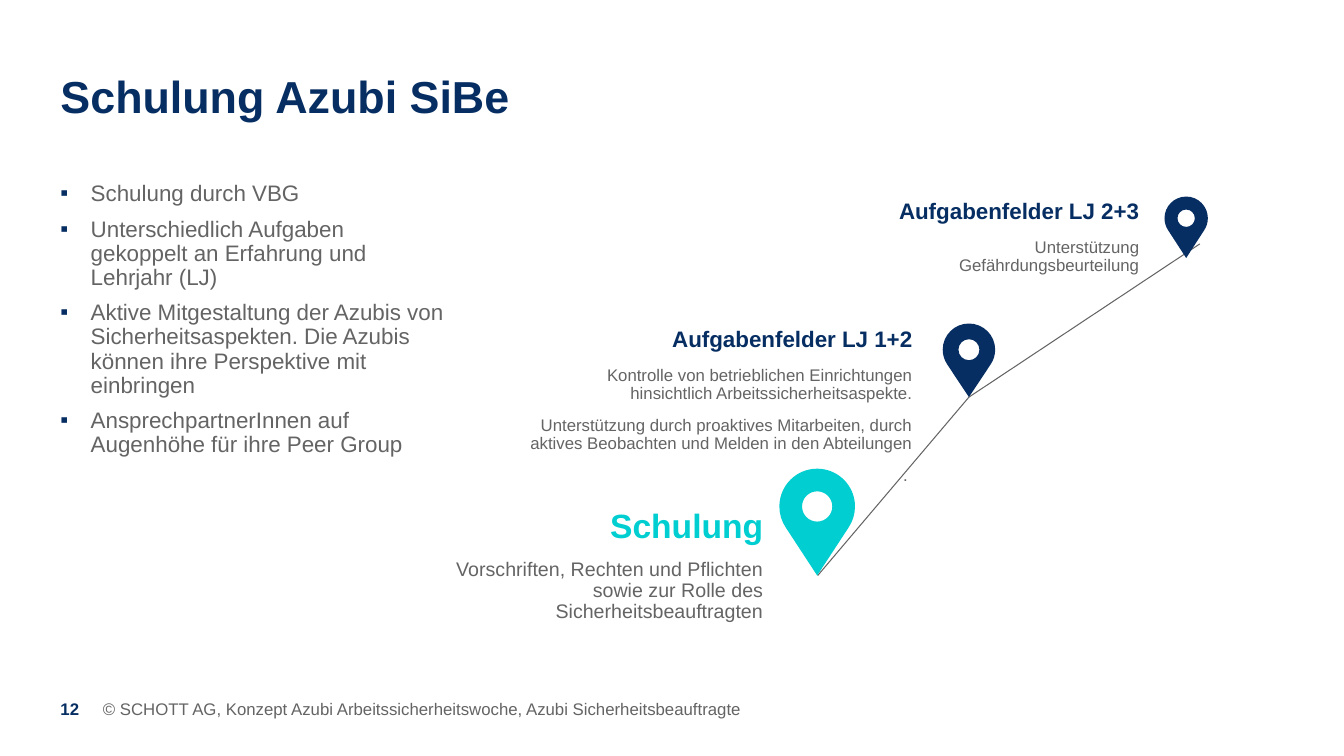
from math import cos, radians, sin, tan

from lxml.etree import SubElement
from pptx import Presentation
from pptx.dml.color import RGBColor
from pptx.enum.shapes import MSO_CONNECTOR
from pptx.enum.text import MSO_ANCHOR, MSO_AUTO_SIZE, PP_ALIGN
from pptx.oxml.ns import qn
from pptx.util import Inches, Pt

COLORS = {"navy": "062E62", "gray": "646464", "cyan": "00CED0"}
FONT = "Arial"

TRAINING_POINTS = [
    "Schulung durch VBG",
    "Unterschiedlich Aufgaben gekoppelt an Erfahrung und Lehrjahr (LJ)",
    "Aktive Mitgestaltung der Azubis von Sicherheitsaspekten. "
    "Die Azubis können ihre Perspektive mit einbringen",
    "AnsprechpartnerInnen auf Augenhöhe für ihre Peer Group",
]

# Each stage: color, pin (left, top, width, height), text box, sizes, heading, details
STAGES = [
    ("navy", (9.35, 3.21, 0.52, 0.73), (5.23, 3.26, 3.82, 1.88), (16, 12),
     "Aufgabenfelder LJ 1+2",
     ["Kontrolle von betrieblichen Einrichtungen hinsichtlich Arbeitssicherheitsaspekte.",
      "Unterstützung durch proaktives Mitarbeiten, durch aktives Beobachten und Melden "
      "in den Abteilungen",
      ". "]),
    ("navy", (11.55, 1.95, 0.43, 0.61), (8.48, 1.99, 2.82, 0.96), (16, 12),
     "Aufgabenfelder LJ 2+3",
     ["Unterstützung Gefährdungsbeurteilung"]),
    ("cyan", (7.73, 4.65, 0.75, 1.06), (4.49, 5.05, 3.08, 1.15), (24, 14), "Schulung",
     ["Vorschriften, Rechten und Pflichten sowie zur Rolle des Sicherheitsbeauftragten"]),
]
ROUTE = [(8.11, 5.71), (9.61, 3.94), (11.9, 2.42)]

# Angles of the corner points on a pin's round head and on its hole
HEAD_ANGLES = [146, 180, 270, 360, 394]
HOLE_ANGLES = [0, 90, 180, 270, 360]


def rgb(color):
    return RGBColor.from_string(COLORS[color])


def prepare_frame(frame):
    frame.word_wrap = True
    frame.auto_size = MSO_AUTO_SIZE.NONE
    frame.margin_left = frame.margin_right = 0
    frame.margin_top = frame.margin_bottom = 0


def add_text_frame(slide, box):
    frame = slide.shapes.add_textbox(*map(Inches, box)).text_frame
    prepare_frame(frame)
    return frame


def format_runs(paragraph, size, color, bold=False):
    for run in paragraph.runs:
        run.font.name = FONT
        run.font.size = Pt(size)
        run.font.bold = bold
        run.font.color.rgb = rgb(color)


def set_bullet(paragraph):
    properties = paragraph._p.get_or_add_pPr()
    properties.set("marL", str(Inches(0.3)))
    properties.set("indent", str(-Inches(0.3)))
    bullet_color = SubElement(properties, qn("a:buClr"))
    SubElement(bullet_color, qn("a:srgbClr"), val=COLORS["navy"])
    SubElement(properties, qn("a:buFont"), typeface=FONT)
    SubElement(properties, qn("a:buChar"), char="▪")


def add_title(slide, box):
    title = slide.shapes.title
    title.left, title.top, title.width, title.height = map(Inches, box)
    frame = title.text_frame
    prepare_frame(frame)
    frame.vertical_anchor = MSO_ANCHOR.BOTTOM
    frame.text = "Schulung Azubi SiBe"
    heading = frame.paragraphs[0]
    heading.alignment = PP_ALIGN.LEFT
    heading.line_spacing = 0.9
    format_runs(heading, 32, "navy", bold=True)


def add_training_points(slide, box):
    frame = add_text_frame(slide, box)
    frame.text = "\n".join(TRAINING_POINTS)
    for index, point in enumerate(frame.paragraphs):
        set_bullet(point)
        point.line_spacing = 0.9
        if index:
            point.space_before = Pt(8)
        format_runs(point, 16, "gray")


def add_route(slide, stops):
    for start, end in zip(stops, stops[1:]):
        leg = slide.shapes.add_connector(
            MSO_CONNECTOR.STRAIGHT, *map(Inches, start + end))
        leg.line.color.rgb = rgb("gray")
        leg.line.width = Pt(0.75)
        SubElement(leg._element.spPr, qn("a:effectLst"))


def add_pin(slide, box, color):
    left, top, width, height = map(Inches, box)
    center_x, center_y = left + width / 2, top + width / 2

    def on_circle(radius, angle):
        turn = radians(angle)
        return center_x + radius * cos(turn), center_y + radius * sin(turn)

    def bezier_points(radius, first, last):
        reach = 4 / 3 * tan(radians(last - first) / 4) * radius
        (x1, y1), (x2, y2) = on_circle(radius, first), on_circle(radius, last)
        a, b = radians(first), radians(last)
        return [(x1 - reach * sin(a), y1 + reach * cos(a)),
                (x2 + reach * sin(b), y2 - reach * cos(b)), (x2, y2)]

    # Corner points: round head, tip, then the hole
    circles = [(width / 2, HEAD_ANGLES), (width * 0.2, HOLE_ANGLES)]
    head, hole = [[on_circle(radius, angle) for angle in angles]
                  for radius, angles in circles]
    outline = slide.shapes.build_freeform(*head[0])
    outline.add_line_segments(head[1:] + [(center_x, top + height)])
    outline.move_to(*hole[0])
    outline.add_line_segments(hole[1:])
    pin = outline.convert_to_shape()

    # Round every side except the one to the tip
    sides = list(pin._element.iter(qn("a:lnTo")))
    del sides[len(HEAD_ANGLES) - 1]
    curves = [bezier_points(radius, *pair) for radius, angles in circles
              for pair in zip(angles, angles[1:])]
    for side, points in zip(sides, curves):
        curve = side.getparent().makeelement(qn("a:cubicBezTo"))
        for x, y in points:
            SubElement(curve, qn("a:pt"), x=str(round(x - pin.left)),
                       y=str(round(y - pin.top)))
        side.getparent().replace(side, curve)

    pin.shadow.inherit = False
    pin.fill.solid()
    pin.fill.fore_color.rgb = rgb(color)
    pin.line.fill.background()


def add_stage_text(slide, color, box, sizes, heading, details):
    frame = add_text_frame(slide, box)
    frame.text = "\n".join([heading, *details])
    for index, paragraph in enumerate(frame.paragraphs):
        paragraph.alignment = PP_ALIGN.RIGHT
        paragraph.line_spacing = 0.9
        paragraph.space_after = Pt(10)
        if index == 0:
            format_runs(paragraph, sizes[0], color, bold=True)
        else:
            format_runs(paragraph, sizes[1], "gray")


def add_footer(slide, left, top):
    parts = [
        (0, 0.31, "12", "navy", True),
        (0.42, 7.09, "© SCHOTT AG, Konzept Azubi Arbeitssicherheitswoche, "
                     "Azubi Sicherheitsbeauftragte", "gray", False),
    ]
    for offset, width, text, color, bold in parts:
        frame = add_text_frame(slide, (left + offset, top, width, 0.2))
        frame.text = text
        format_runs(frame.paragraphs[0], 12, color, bold)


def main():
    presentation = Presentation()
    presentation.slide_width = Inches(13.33)
    presentation.slide_height = Inches(7.5)
    slide = presentation.slides.add_slide(presentation.slide_layouts[5])

    add_title(slide, (0.6, 0.35, 12.13, 0.87))
    add_training_points(slide, (0.6, 1.81, 3.82, 4.65))
    add_route(slide, ROUTE)
    for color, pin_box, text_box, sizes, heading, details in STAGES:
        add_pin(slide, pin_box, color)
        add_stage_text(slide, color, text_box, sizes, heading, details)
    add_footer(slide, 0.6, 6.93)

    presentation.save("out.pptx")


if __name__ == "__main__":
    main()
